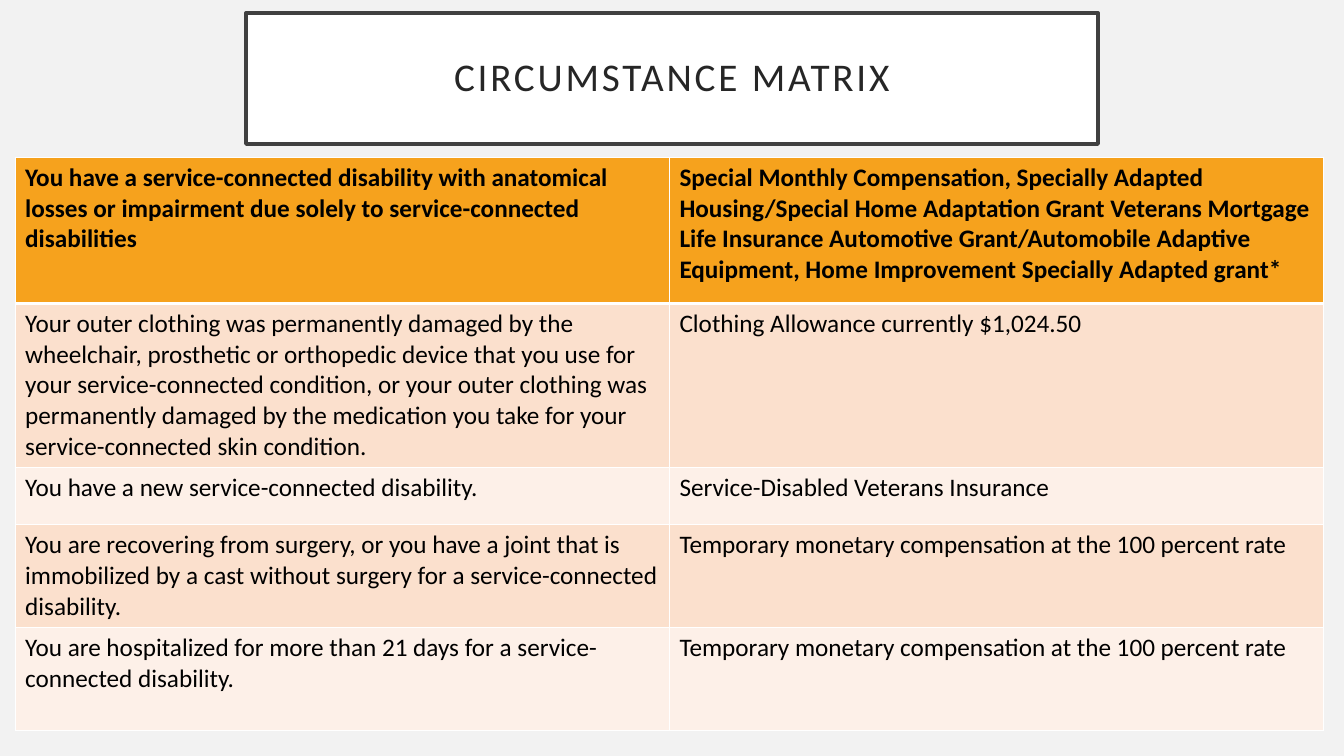
"""Build the Circumstance Matrix slide."""
from dataclasses import dataclass

from lxml.etree import SubElement
from pptx import Presentation
from pptx.dml.color import RGBColor
from pptx.enum.shapes import MSO_SHAPE as Shape
from pptx.enum.text import MSO_ANCHOR as Anchor, PP_ALIGN as Align
from pptx.oxml.ns import qn
from pptx.util import Inches, Pt

HEADER_FILL = "F6A21D"
BAND_FILLS = ("FDF0E8", "FBE0CD")
WHITE = "FFFFFF"


@dataclass
class MatrixRow:
    circumstance: str
    benefit: str
    height: float


MATRIX = [
    MatrixRow(
        "You have a service-connected disability with anatomical losses or impairment "
        "due solely to service-connected disabilities",
        "Special Monthly Compensation, Specially Adapted Housing/Special Home Adaptation "
        "Grant Veterans Mortgage Life Insurance Automotive Grant/Automobile Adaptive "
        "Equipment, Home Improvement Specially Adapted grant*", 1.45),
    MatrixRow(
        "Your outer clothing was permanently damaged by the wheelchair, prosthetic or "
        "orthopedic device that you use for your service-connected condition, or your "
        "outer clothing was permanently damaged by the medication you take for your "
        "service-connected skin condition.",
        "Clothing Allowance currently $1,024.50", 1.45),
    MatrixRow("You have a new service-connected disability.",
              "Service-Disabled Veterans Insurance", 0.57),
    MatrixRow(
        "You are recovering from surgery, or you have a joint that is immobilized by a "
        "cast without surgery for a service-connected disability.",
        "Temporary monetary compensation at the 100 percent rate", 1.02),
    MatrixRow(
        "You are hospitalized for more than 21 days for a service-connected disability.",
        "Temporary monetary compensation at the 100 percent rate", 1.02),
]


def color(value: str) -> RGBColor:
    return RGBColor.from_string(value)


def write(frame, text: str, *, size: float = 18, ink: str = "000000", bold: bool = False,
          align=Align.LEFT, line_spacing: float = 1.0, tracking: float = 0) -> None:
    frame.word_wrap = True
    para = frame.paragraphs[0]
    para.alignment = align
    para.line_spacing = line_spacing
    span = para.add_run()
    span.text = text
    span.font.name = "Calibri"
    span.font.size = Pt(size)
    span.font.bold = bold
    span.font.color.rgb = color(ink)
    if tracking:
        span.font._element.set("spc", str(int(tracking * 100)))


def set_borders(cell, top: float, bottom: float) -> None:
    properties = cell._tc.get_or_add_tcPr()
    for side, width in (("L", 1), ("R", 1), ("T", top), ("B", bottom)):
        line = SubElement(properties, qn(f"a:ln{side}"), w=str(Pt(width)))
        fill = SubElement(line, qn("a:solidFill"))
        SubElement(fill, qn("a:srgbClr"), val=WHITE)


def add_title(page) -> None:
    box = page.shapes.add_shape(Shape.RECTANGLE, Inches(2.44), Inches(0.13),
                                Inches(8.45), Inches(1.3))
    box.shadow.inherit = False
    box.fill.solid()
    box.fill.fore_color.rgb = color(WHITE)
    box.line.color.rgb = color("404040")
    box.line.width = Pt(2.5)
    frame = box.text_frame
    frame.vertical_anchor = Anchor.MIDDLE
    frame.margin_left = frame.margin_right = Inches(0.2)
    frame.margin_top = frame.margin_bottom = Inches(0.2)
    write(frame, "CIRCUMSTANCE MATRIX", size=28, ink="262626", align=Align.CENTER,
          line_spacing=0.9, tracking=2)


def add_matrix(page) -> None:
    height = sum(row.height for row in MATRIX)
    table = page.shapes.add_table(len(MATRIX), 2, Inches(0.15), Inches(1.56),
                                  Inches(12.98), Inches(height)).table
    for index, row in enumerate(MATRIX):
        table.rows[index].height = Inches(row.height)
        header = index == 0
        for column, text in enumerate((row.circumstance, row.benefit)):
            cell = table.cell(index, column)
            set_borders(cell, top=3 if index == 1 else 1, bottom=3 if header else 1)
            cell.fill.solid()
            cell.fill.fore_color.rgb = color(HEADER_FILL if header else BAND_FILLS[index % 2])
            write(cell.text_frame, text, bold=header)


def main() -> None:
    deck = Presentation()
    deck.slide_width = Inches(13.33)
    deck.slide_height = Inches(7.5)
    page = deck.slides.add_slide(deck.slide_layouts[6])
    page.background.fill.solid()
    page.background.fill.fore_color.rgb = color("F2F2F2")
    add_title(page)
    add_matrix(page)
    deck.save("out.pptx")


if __name__ == "__main__":
    main()
